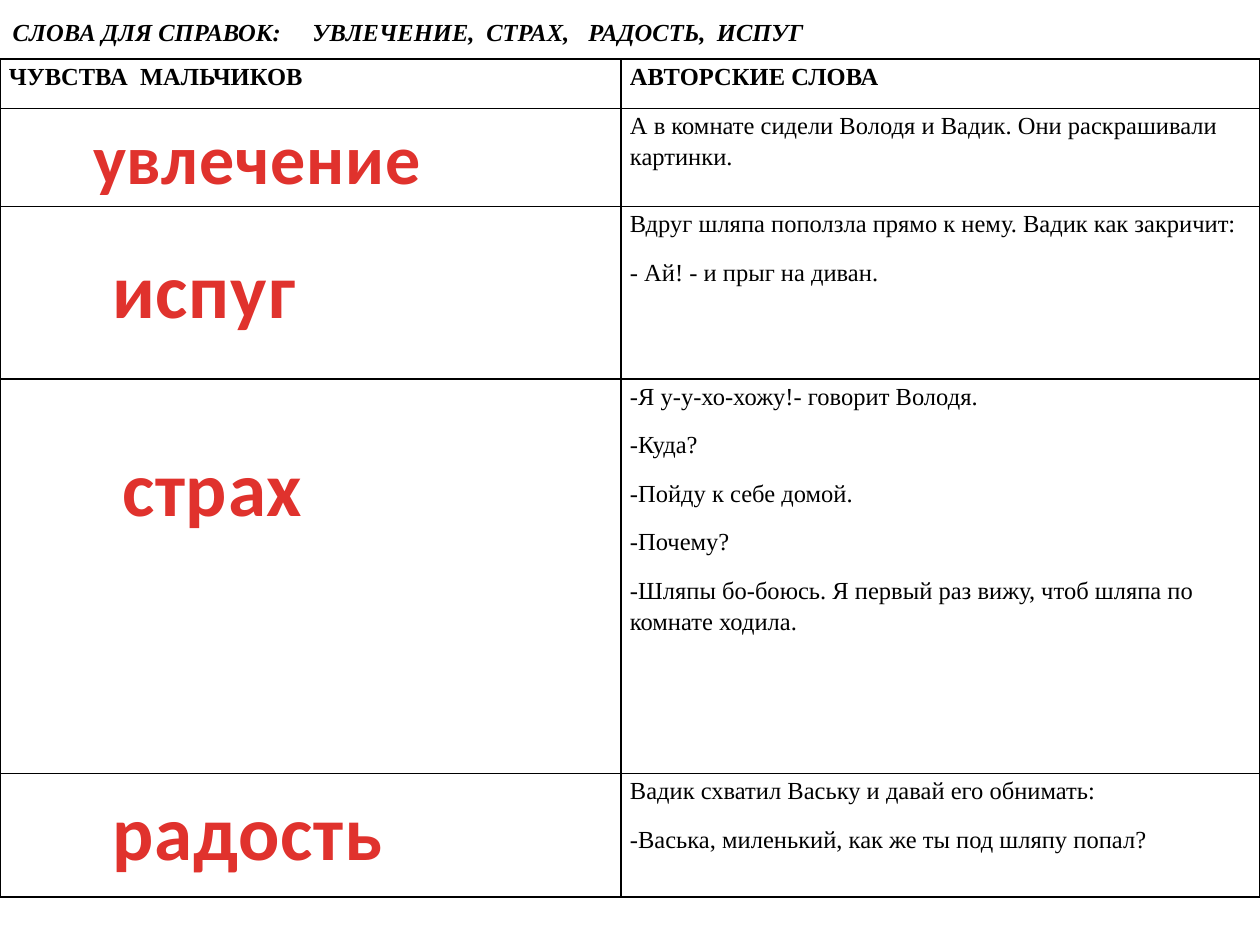
"""Build the slide that matches the boys' feelings with the author's words."""
from dataclasses import dataclass

from lxml.etree import SubElement
from pptx import Presentation
from pptx.dml.color import RGBColor
from pptx.enum.text import MSO_ANCHOR, MSO_AUTO_SIZE as AUTO, PP_ALIGN
from pptx.oxml.ns import qn
from pptx.util import Inches, Pt


@dataclass(frozen=True)
class Theme:
    """Colours, fonts and type sizes of the slide."""
    ink: RGBColor = RGBColor(0, 0, 0)
    red: RGBColor = RGBColor(0xE0, 0x32, 0x2D)
    dark_red: RGBColor = RGBColor(0xA2, 0x20, 0x1C)
    text_font: str = "Times New Roman"
    word_font: str = "Calibri"
    text_size: int = 14


@dataclass(frozen=True)
class Feeling:
    """A large red word and its frame in inches."""
    word: str
    left: float
    top: float
    width: float
    height: float = 0.84
    size: int = 44


@dataclass(frozen=True)
class Row:
    """A table row: its height, feeling heading and author's paragraphs."""
    height: float
    quotes: tuple[str, ...]
    label: str = ""
    bold: bool = False


THEME = Theme()
TITLE = "СЛОВА ДЛЯ СПРАВОК:\tУВЛЕЧЕНИЕ,\tСТРАХ,\tРАДОСТЬ,\tИСПУГ"
TITLE_TABS = (2.38, 3.76, 4.57, 5.59)
COLUMNS = (4.93, 5.07)
ROWS = (
    Row(0.39, ("АВТОРСКИЕ СЛОВА",), "ЧУВСТВА  МАЛЬЧИКОВ", True),
    Row(0.78, ("А в комнате сидели Володя и Вадик. Они раскрашивали картинки.",)),
    Row(1.37, ("Вдруг шляпа поползла прямо к нему. Вадик как закричит:",
               "- Ай! - и прыг на диван.")),
    Row(3.13, ("-Я у-у-хо-хожу!- говорит Володя.", "-Куда?", "-Пойду к себе домой.",
               "-Почему?",
               "-Шляпы бо-боюсь. Я первый раз вижу, чтоб шляпа по комнате ходила.")),
    Row(0.98, ("Вадик схватил Ваську и давай его обнимать:",
               "-Васька, миленький, как же ты под шляпу попал?")),
)
FEELINGS = (
    Feeling("увлечение", 0.62, 0.86, 2.84, 0.77, 40),
    Feeling("испуг", 0.78, 1.87, 1.68),
    Feeling("страх", 0.86, 3.44, 1.65),
    Feeling("радость", 0.78, 6.17, 2.37),
)


def apply(target, **values) -> None:
    """Set every given attribute on the target."""
    for name, value in values.items():
        setattr(target, name, value)


def write(p, text: str, **style) -> None:
    """Put one run of body text into a paragraph."""
    r = p.add_run()
    r.text = text
    apply(r.font, name=THEME.text_font, size=Pt(THEME.text_size), **style)
    r.font.color.rgb = THEME.ink


def add_title(s) -> None:
    """Fill the title placeholder with the tabbed list of reference words."""
    sp = s.shapes.title
    apply(sp, left=0, top=0, width=Inches(10), height=Inches(0.5))
    tf = sp.text_frame
    apply(tf, word_wrap=True, auto_size=AUTO.NONE, vertical_anchor=MSO_ANCHOR.MIDDLE)
    p = tf.paragraphs[0]
    p.alignment = PP_ALIGN.LEFT
    tabs = SubElement(p._p.get_or_add_pPr(), qn("a:tabLst"))
    for stop in TITLE_TABS:
        SubElement(tabs, qn("a:tab"), pos=str(Inches(stop)), algn="l")
    write(p, TITLE, bold=True, italic=True)


def add_borders(cell) -> None:
    """Draw a thin line on all four sides of a cell."""
    tcPr = cell._tc.get_or_add_tcPr()
    for side in ("lnL", "lnR", "lnT", "lnB"):
        line = SubElement(tcPr, qn(f"a:{side}"), w=str(Pt(1)))
        fill = SubElement(line, qn("a:solidFill"))
        SubElement(fill, qn("a:srgbClr"), val=str(THEME.ink))


def fill_cell(cell, texts: tuple[str, ...], bold: bool) -> None:
    """Write the paragraphs of a cell and format it."""
    apply(cell, margin_left=Inches(0.07), margin_right=Inches(0.07),
          margin_top=0, margin_bottom=0)
    add_borders(cell)
    cell.fill.background()
    tf = cell.text_frame
    for i, text in enumerate(texts):
        p = tf.add_paragraph() if i else tf.paragraphs[0]
        apply(p, line_spacing=1.15, space_after=Pt(10))
        write(p, text, bold=bold)


def add_feelings_table(s) -> None:
    """Add the two-column table of feelings and quotations."""
    height = sum(row.height for row in ROWS)
    table = s.shapes.add_table(len(ROWS), len(COLUMNS), 0, Inches(0.47),
                               Inches(sum(COLUMNS)), Inches(height)).table
    apply(table, first_row=False, horz_banding=False)
    for column, width in zip(table.columns, COLUMNS):
        column.width = Inches(width)
    for i, row in enumerate(ROWS):
        table.rows[i].height = Inches(row.height)
        fill_cell(table.cell(i, 0), (row.label,) if row.label else (), row.bold)
        fill_cell(table.cell(i, 1), row.quotes, row.bold)


def add_feeling(s, item: Feeling) -> None:
    """Add one large word with a red gradient."""
    box = (item.left, item.top, item.width, item.height)
    tf = s.shapes.add_textbox(*map(Inches, box)).text_frame
    apply(tf, word_wrap=False, auto_size=AUTO.SHAPE_TO_FIT_TEXT)
    p = tf.paragraphs[0]
    p.alignment = PP_ALIGN.CENTER
    r = p.add_run()
    r.text = item.word
    apply(r.font, name=THEME.word_font, size=Pt(item.size), bold=True)
    r._r.get_or_add_rPr().set("spc", "50")
    fill = r.font.fill
    fill.gradient()
    fill.gradient_angle = 270
    shades = ((0.25, THEME.red), (1, THEME.dark_red))
    for stop, (position, color) in zip(fill.gradient_stops, shades):
        stop.position = position
        stop.color.rgb = color


def main() -> None:
    """Build and save the presentation."""
    prs = Presentation()
    apply(prs, slide_width=Inches(10), slide_height=Inches(7.5))
    s = prs.slides.add_slide(prs.slide_layouts[5])
    add_title(s)
    add_feelings_table(s)
    for item in FEELINGS:
        add_feeling(s, item)
    prs.save("out.pptx")


if __name__ == "__main__":
    main()
